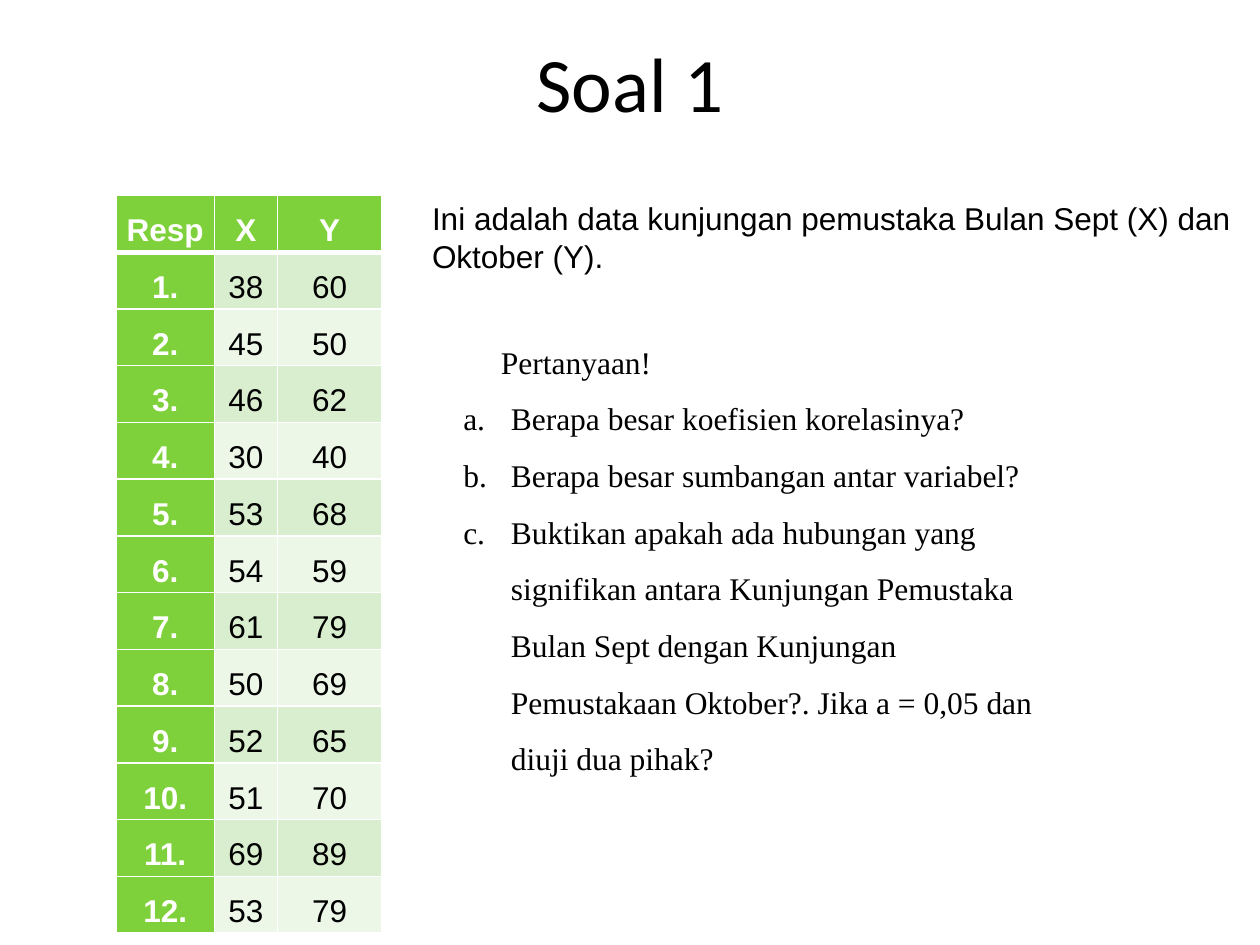
from dataclasses import dataclass

from lxml.etree import SubElement
from pptx import Presentation
from pptx.dml.color import RGBColor
from pptx.enum.text import MSO_ANCHOR, PP_ALIGN
from pptx.oxml.ns import qn
from pptx.util import Cm, Pt

GREEN, DARK_BAND, LIGHT_BAND = "7FD13B", "D8EECE", "ECF7E8"
WHITE, BLACK = "FFFFFF", "000000"

COLUMN_WIDTHS = (1.98, 1.27, 2.11)
ROW_HEIGHT = 1.07
HEADINGS = ("Resp", "X", "Y")
VISITS = (
    (38, 60), (45, 50), (46, 62), (30, 40), (53, 68), (54, 59),
    (61, 79), (50, 69), (52, 65), (51, 70), (69, 89), (53, 79),
)
QUESTIONS = (
    "Berapa besar koefisien korelasinya?",
    "Berapa besar sumbangan antar variabel?",
    "Buktikan apakah ada hubungan yang signifikan antara Kunjungan Pemustaka "
    "Bulan Sept dengan Kunjungan Pemustakaan Oktober?. Jika a = 0,05 dan diuji dua pihak?",
)


@dataclass(frozen=True)
class Line:
    """A paragraph with its type and layout, lengths in centimetres."""

    text: str
    font: str = "Arial"
    size: float = 18
    colour: str = BLACK
    bold: bool = False
    align: PP_ALIGN = PP_ALIGN.LEFT
    spacing: float = 1.0
    margin: float = 0
    indent: float = 0
    numbering: str = ""


def rgb(value: str) -> RGBColor:
    """Turn a hex string into a colour."""
    return RGBColor.from_string(value)


def write_line(paragraph, line: Line) -> None:
    """Write one line into a paragraph."""
    properties = paragraph._p.get_or_add_pPr()
    properties.set("marL", str(Cm(line.margin)))
    properties.set("indent", str(Cm(line.indent)))
    if line.numbering:
        SubElement(properties, qn("a:buFont"), typeface="+mj-lt")
        SubElement(properties, qn("a:buAutoNum"), type=line.numbering)
    paragraph.alignment = line.align
    paragraph.line_spacing = line.spacing
    run = paragraph.add_run()
    run.text = line.text
    run.font.name = line.font
    run.font.size = Pt(line.size)
    run.font.bold = line.bold
    run.font.color.rgb = rgb(line.colour)


def add_text(slide, left: float, top: float, width: float, height: float,
             lines: list[Line], anchor: MSO_ANCHOR = MSO_ANCHOR.TOP) -> None:
    """Add a wrapping text box."""
    frame = slide.shapes.add_textbox(Cm(left), Cm(top), Cm(width), Cm(height)).text_frame
    frame.word_wrap = True
    frame.vertical_anchor = anchor
    for index, line in enumerate(lines):
        write_line(frame.add_paragraph() if index else frame.paragraphs[0], line)


def add_borders(cell, top: float, bottom: float) -> None:
    """Give a cell white borders, with widths in points."""
    properties = cell._tc.get_or_add_tcPr()
    for side, width in (("L", 1), ("R", 1), ("T", top), ("B", bottom)):
        border = SubElement(properties, qn(f"a:ln{side}"), w=str(Pt(width)))
        SubElement(SubElement(border, qn("a:solidFill")), qn("a:srgbClr"), val=WHITE)


def fill_cell(cell, text: str, row: int, column: int) -> None:
    """Write and colour a cell according to its place in the table."""
    heading = row == 0 or column == 0
    cell.margin_left = cell.margin_right = Cm(0.18)
    cell.margin_top = cell.margin_bottom = 0
    add_borders(cell, top=3 if row == 1 else 1, bottom=3 if row == 0 else 1)
    cell.fill.solid()
    band = DARK_BAND if row % 2 else LIGHT_BAND
    cell.fill.fore_color.rgb = rgb(GREEN if heading else band)
    write_line(cell.text_frame.paragraphs[0], Line(
        text, colour=WHITE if heading else BLACK, bold=heading,
        align=PP_ALIGN.CENTER, spacing=1.5))


def add_visit_table(slide, left: float, top: float) -> None:
    """Add the table of visits per respondent."""
    records = [HEADINGS, *((f"{number}.", str(x), str(y))
                           for number, (x, y) in enumerate(VISITS, 1))]
    table = slide.shapes.add_table(
        len(records), len(HEADINGS), Cm(left), Cm(top),
        Cm(sum(COLUMN_WIDTHS)), Cm(ROW_HEIGHT * len(records))).table
    table.horz_banding = False
    for column, width in zip(table.columns, COLUMN_WIDTHS):
        column.width = Cm(width)
    for row, record in enumerate(records):
        table.rows[row].height = Cm(ROW_HEIGHT)
        for column, text in enumerate(record):
            fill_cell(table.cell(row, column), text, row, column)


def main() -> None:
    """Build and save the slide."""
    deck = Presentation()
    deck.slide_width, deck.slide_height = Cm(25.4), Cm(19.05)
    slide = deck.slides.add_slide(deck.slide_layouts[6])
    add_text(slide, 1.27, 0.76, 22.86, 1.78,
             [Line("Soal 1", "Calibri", 44, align=PP_ALIGN.CENTER)], MSO_ANCHOR.MIDDLE)
    add_visit_table(slide, 2.34, 3.94)
    add_text(slide, 8.46, 3.89, 17.42, 1.8, [Line(
        "Ini adalah data kunjungan pemustaka Bulan Sept (X) dan Oktober (Y).")])
    serif = "Times New Roman"
    add_text(slide, 9.09, 6.4, 12.7, 9.5, [
        Line("Pertanyaan!", serif, spacing=1.5, margin=0.76),
        *(Line(question, serif, spacing=1.5, margin=0.96, indent=-0.96,
               numbering="alphaLcPeriod") for question in QUESTIONS)])
    deck.save("out.pptx")


if __name__ == "__main__":
    main()
